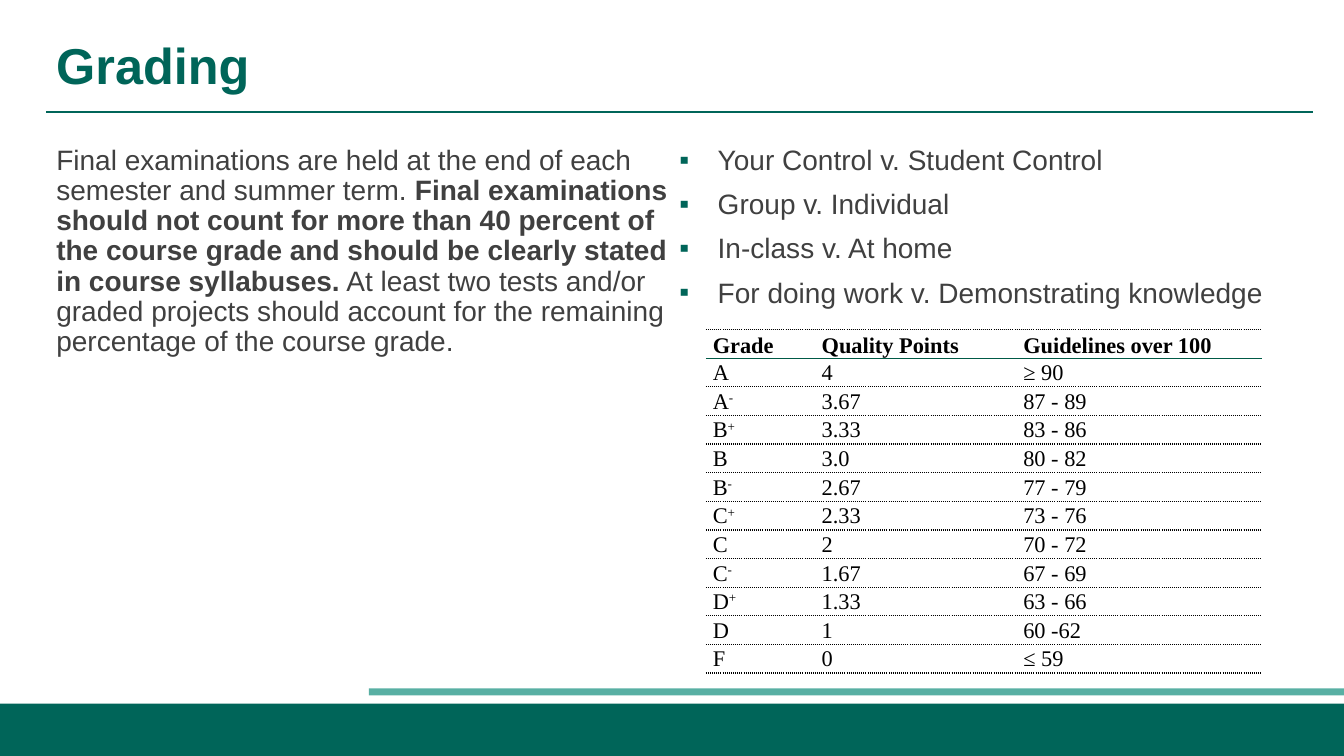
from pptx import Presentation
from pptx.dml.color import RGBColor
from pptx.enum.shapes import MSO_CONNECTOR, MSO_SHAPE
from pptx.enum.text import MSO_ANCHOR
from pptx.oxml import parse_xml
from pptx.oxml.ns import nsdecls, qn
from pptx.util import Inches, Pt
from lxml import etree

GREEN = RGBColor(0x00, 0x65, 0x59)
TEAL = RGBColor(0x15, 0x8F, 0x7E)
HEADER_RULE = RGBColor(0x00, 0x5A, 0x46)
GREY = RGBColor(0x40, 0x40, 0x40)
BLACK = RGBColor(0x00, 0x00, 0x00)


def add_text(left, top, width, height):
    box = slide.shapes.add_textbox(Inches(left), Inches(top), Inches(width), Inches(height))
    box.text_frame.word_wrap = True
    return box.text_frame


def set_border(cell, side, color, dash):
    cell._tc.get_or_add_tcPr().append(parse_xml(
        f'<a:{side} {nsdecls("a")} w="12700"><a:solidFill><a:srgbClr val="{color}"/>'
        f'</a:solidFill><a:prstDash val="{dash}"/></a:{side}>'))


presentation = Presentation()
presentation.slide_width = Inches(13.33)
presentation.slide_height = Inches(7.5)
slide = presentation.slides.add_slide(presentation.slide_layouts[6])

# Footer bands
for left, top, width, height, color in [(0, 6.98, 13.33, 0.52, GREEN),
                                        (3.66, 6.83, 9.67, 0.07, TEAL)]:
    band = slide.shapes.add_shape(MSO_SHAPE.RECTANGLE, Inches(left), Inches(top),
                                  Inches(width), Inches(height))
    band.shadow.inherit = False
    band.fill.solid()
    band.fill.fore_color.rgb = color
    band.line.fill.background()
    if color == TEAL:
        tint = band._element.spPr.find(".//" + qn("a:srgbClr"))
        etree.SubElement(tint, qn("a:alpha")).set("val", "71000")

# Title and rule
title_rule = slide.shapes.add_connector(MSO_CONNECTOR.STRAIGHT, Inches(0.46), Inches(1.11),
                                        Inches(13.02), Inches(1.11))
title_rule.line.color.rgb = GREEN
title_rule.line.width = Pt(1.5)
etree.SubElement(title_rule._element.spPr, qn("a:effectLst"))

title = add_text(0.46, 0.36, 12.56, 0.76).paragraphs[0]
title.text = "Grading"
title.line_spacing = 0.9
title.font.name = "Arial"
title.font.size = Pt(36)
title.font.bold = True
title.font.color.rgb = GREEN

# Examination policy
policy = add_text(0.46, 1.4, 6.38, 2.26).paragraphs[0]
policy.line_spacing = 0.9
for wording, bold in [
    ("Final examinations are held at the end of each semester and summer term. ", False),
    ("Final examinations should not count for more than 40 percent of the course grade "
     "and should be clearly stated in course syllabuses.", True),
    (" At least two tests and/or graded projects should account for the remaining "
     "percentage of the course grade.", False),
]:
    run = policy.add_run()
    run.text = wording
    run.font.name = "Arial"
    run.font.size = Pt(20)
    run.font.bold = bold
    run.font.color.rgb = GREY

# Grading choices
choices = add_text(6.64, 1.4, 6.38, 1.85)
choices.text = "\n".join(["Your Control v. Student Control", "Group v. Individual",
                          "In-class v. At home", "For doing work v. Demonstrating knowledge"])
for number, choice in enumerate(choices.paragraphs):
    choice.line_spacing = 0.9
    choice.space_before = Pt(10 if number else 0)
    indent = choice._p.get_or_add_pPr()
    indent.set("marL", str(Inches(0.38)))
    indent.set("indent", str(Inches(-0.38)))
    bullet_color = etree.SubElement(indent, qn("a:buClr"))
    etree.SubElement(bullet_color, qn("a:srgbClr")).set("val", str(GREEN))
    etree.SubElement(indent, qn("a:buFont")).set("typeface", "Arial")
    etree.SubElement(indent, qn("a:buChar")).set("char", "▪")
    choice.font.name = "Arial"
    choice.font.size = Pt(20)
    choice.font.color.rgb = GREY

# Grade scale
grades = [
    ("Grade", "Quality Points", "Guidelines over 100"),
    ("A", "4", "≥ 90"),
    ("A-", "3.67", "87 - 89"),
    ("B+", "3.33", "83 - 86"),
    ("B", "3.0", "80 - 82"),
    ("B-", "2.67", "77 - 79"),
    ("C+", "2.33", "73 - 76"),
    ("C", "2", "70 - 72"),
    ("C-", "1.67", "67 - 69"),
    ("D+", "1.33", "63 - 66"),
    ("D", "1", "60 -62"),
    ("F", "0", "≤ 59"),
]
scale = slide.shapes.add_table(len(grades), 3, Inches(7), Inches(3.27),
                               Inches(5.52), Inches(3.41)).table
scale.first_row = True
scale.horz_banding = False
for column, width in zip(scale.columns, (1.08, 2, 2.44)):
    column.width = Inches(width)

for row, entries in enumerate(grades):
    for col, entry in enumerate(entries):
        cell = scale.cell(row, col)
        cell.margin_left = cell.margin_right = Inches(0.07)
        cell.margin_top = cell.margin_bottom = 0
        cell.vertical_anchor = MSO_ANCHOR.MIDDLE if row else MSO_ANCHOR.BOTTOM
        for side in ("lnL", "lnR"):
            cell._tc.get_or_add_tcPr().append(
                parse_xml(f'<a:{side} {nsdecls("a")} w="0"><a:noFill/></a:{side}>'))
        set_border(cell, "lnT", *((HEADER_RULE, "solid") if row == 1 else (BLACK, "sysDot")))
        set_border(cell, "lnB", *((HEADER_RULE, "solid") if row == 0 else (BLACK, "sysDot")))
        cell.fill.background()

        # A plus or minus after the letter is raised
        line = cell.text_frame.paragraphs[0]
        line.line_spacing = 1.05
        raised = col == 0 and entry[-1] in "+-"
        for part in (entry[:-1], entry[-1]) if raised else (entry,):
            run = line.add_run()
            run.text = part
            run.font.name = "Times New Roman"
            run.font.size = Pt(16)
            run.font.bold = row == 0
            run.font.color.rgb = BLACK
            if raised and part in "+-":
                run.font._element.set("baseline", "30000")

presentation.save("out.pptx")
